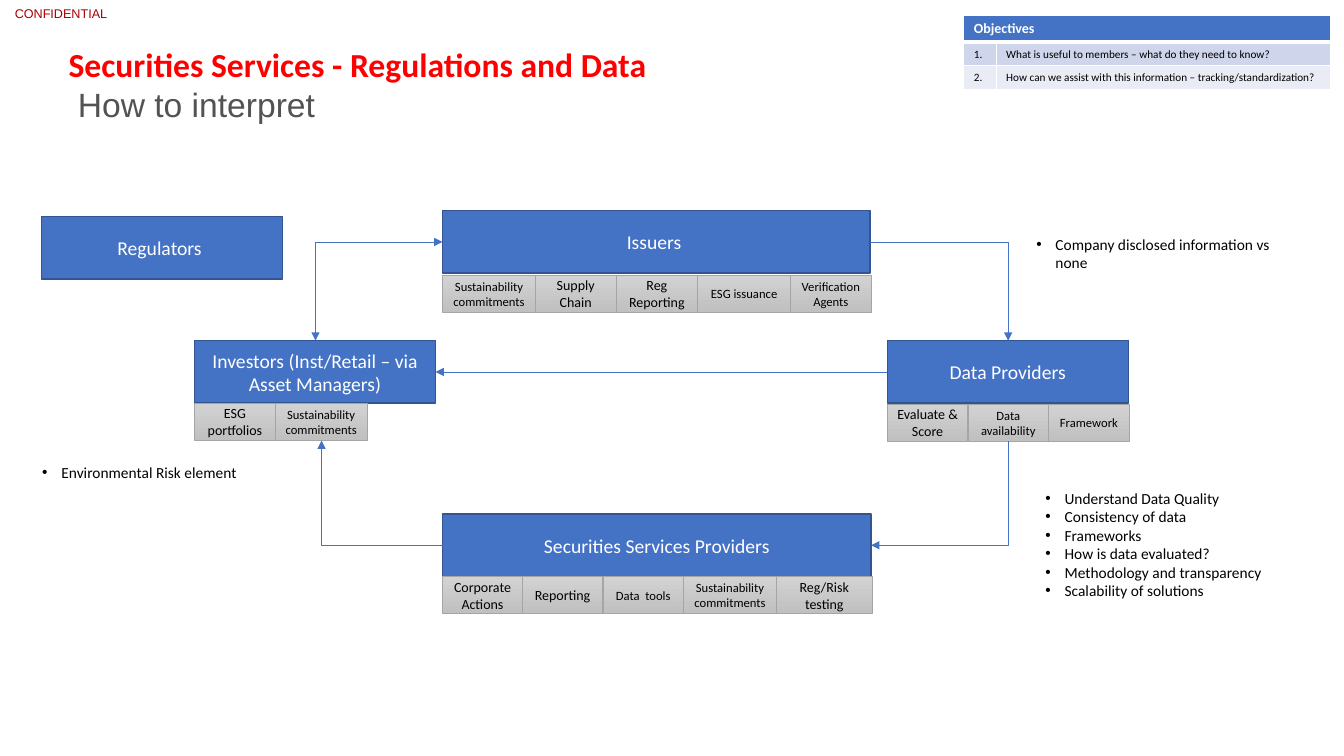
import pptx
import pptx.util
import pptx.dml.color
import pptx.enum.shapes
import pptx.enum.text
import pptx.oxml
import pptx.oxml.ns
from pptx.util import Inches, Pt

BLUE, NAVY, WHITE, BLACK = "4472C4", "325491", "FFFFFF", "000000"
MIDDLE = pptx.enum.text.MSO_ANCHOR.MIDDLE
CENTER = pptx.enum.text.PP_ALIGN.CENTER
LEFT = pptx.enum.text.PP_ALIGN.LEFT

# Content: text, left, top, width, height, size, bold, font, colour, align
headings = [
    ("CONFIDENTIAL", 0, 0, 1.21, 0.26, 9, False, "Arial", "A80000", CENTER),
    (" How to interpret", 0.68, 0.84, 10.94, 0.39, 24, False, "Arial", "525355", LEFT),
    ("Securities Services - Regulations and Data", 0.68, 0.45, 10.94, 0.39, 24, True,
     "Calibri", "FF0000", LEFT),
]
objectives = [
    ("Objectives", ""),
    ("1.", "What is useful to members – what do they need to know?"),
    ("2.", "How can we assist with this information – tracking/standardization?"),
]
row_fills = [BLUE, "CFD5EA", "E9EBF5"]
column_widths = [0.32, 3.32]
row_heights = [0.27, 0.23, 0.23]

# Bulleted notes: left, top, width, height, lines
notes = [
    (10.27, 4.8, 2.81, 1.21, ["Understand Data Quality", "Consistency of data", "Frameworks",
                              "How is data evaluated?", "Methodology and transparency",
                              "Scalability of solutions"]),
    (10.18, 2.28, 2.81, 0.47, ["Company disclosed information vs none"]),
    (0.32, 4.54, 2.81, 0.29, ["Environmental Risk element"]),
]

# Parties: name, left, top, width, top of topics, topics as (text, size, width)
parties = [
    ("Issuers ", 4.39, 2.09, 4.24, 2.73, [
        ("Sustainability commitments", 9, 0.92), ("Supply Chain", 10, 0.8),
        ("Reg Reporting", 10, 0.81), ("ESG issuance", 9, 0.92),
        ("Verification Agents", 9, 0.8)]),
    ("Data Providers", 8.8, 3.38, 2.39, 4.01, [
        ("Evaluate & Score", 10, 0.8), ("Data availability", 9, 0.8), ("Framework", 9, 0.8)]),
    ("Investors (Inst/Retail – via Asset Managers)", 1.93, 3.38, 2.39, 4.0, [
        ("ESG portfolios", 10, 0.8), ("Sustainability commitments", 9, 0.91)]),
    ("Securities Services Providers", 4.39, 5.1, 4.25, 5.72, [
        ("Corporate Actions", 10, 0.79), ("Reporting", 10, 0.8), ("Data  tools", 9, 0.8),
        ("Sustainability commitments", 9, 0.92), ("Reg/Risk testing", 10, 0.95)]),
    ("Regulators ", 0.41, 2.15, 2.39, 0, []),
]
PARTY_HEIGHT, TOPIC_HEIGHT = 0.62, 0.37

# Flows run sideways first, then up or down: start, end, arrowheads
flows = [
    ((8.63, 2.4), (10, 3.38), ["tailEnd"]),
    ((8.64, 5.41), (10, 4.38), ["headEnd"]),
    ((4.39, 5.41), (3.19, 4.37), ["tailEnd"]),
    ((8.8, 3.69), (4.32, 3.69), ["tailEnd"]),
    ((4.39, 2.4), (3.13, 3.38), ["headEnd", "tailEnd"]),
]


def rgb(hex_colour):
    return pptx.dml.color.RGBColor.from_string(hex_colour)


def add_xml(parent, tag, **attributes):
    child = pptx.oxml.ns.qn(tag)
    element = parent.makeelement(child, attributes)
    parent.append(element)
    return element


def style(paragraph, size, colour, bold=False, font="Calibri", align=LEFT):
    paragraph.alignment = align
    paragraph.font.size, paragraph.font.bold = Pt(size), bold
    paragraph.font.name, paragraph.font.color.rgb = font, rgb(colour)


def add_text(left, top, width, height):
    box = slide.shapes.add_textbox(Inches(left), Inches(top), Inches(width), Inches(height))
    box.text_frame.word_wrap = True
    return box.text_frame


def add_box(text, left, top, width, height, size, colour, outline, weight):
    box = slide.shapes.add_shape(pptx.enum.shapes.MSO_SHAPE.RECTANGLE, Inches(left),
                                 Inches(top), Inches(width), Inches(height))
    box.shadow.inherit = False
    box.line.color.rgb, box.line.width = rgb(outline), Pt(weight)
    box.text_frame.text = text
    box.text_frame.word_wrap = True
    box.text_frame.vertical_anchor = MIDDLE
    style(box.text_frame.paragraphs[0], size, colour, align=CENTER)
    return box


presentation = pptx.Presentation()
presentation.slide_width, presentation.slide_height = Inches(13.33), Inches(7.5)
slide = presentation.slides.add_slide(presentation.slide_layouts[6])

# Headings
for text, left, top, width, height, size, bold, font, colour, align in headings:
    frame = add_text(left, top, width, height)
    frame.margin_left = frame.margin_right = frame.margin_top = frame.margin_bottom = 0
    frame.text = text
    style(frame.paragraphs[0], size, colour, bold, font, align)
    if align == CENTER:
        frame.vertical_anchor = MIDDLE
    else:
        frame.paragraphs[0].line_spacing = Pt(28)

# Objectives table
table = slide.shapes.add_table(3, 2, Inches(9.56), Inches(0.15), Inches(3.64),
                               Inches(sum(row_heights))).table
for column, width in zip(table.columns, column_widths):
    column.width = Inches(width)
for r, texts in enumerate(objectives):
    table.rows[r].height = Inches(row_heights[r])
    for c, text in enumerate(texts):
        cell = table.cell(r, c)
        cell.text = text
        header = r == 0
        style(cell.text_frame.paragraphs[0], 10 if header else 8,
              WHITE if header else BLACK, header)
        for side in ("a:lnL", "a:lnR", "a:lnT", "a:lnB"):
            thick = (header and side == "a:lnB") or (r == 1 and side == "a:lnT")
            border = add_xml(cell._tc.get_or_add_tcPr(), side, w=str(Pt(3 if thick else 1)))
            add_xml(add_xml(border, "a:solidFill"), "a:srgbClr", val=WHITE)
        cell.fill.solid()
        cell.fill.fore_color.rgb = rgb(row_fills[r])
table.cell(0, 0).merge(table.cell(0, 1))

# Bulleted notes
for left, top, width, height, lines in notes:
    frame = add_text(left, top, width, height)
    frame.text = "\n".join(lines)
    for paragraph in frame.paragraphs:
        style(paragraph, 11, BLACK)
        properties = paragraph._p.get_or_add_pPr()
        properties.set("marL", str(Inches(0.19)))
        properties.set("indent", str(Inches(-0.19)))
        bullet_font = add_xml(properties, "a:buFont", typeface="Arial")
        bullet = add_xml(properties, "a:buChar", char="•")
        properties.insert(0, bullet_font)
        properties.insert(1, bullet)

# Parties with their topics
for name, left, top, width, topics_top, topics in parties:
    party = add_box(name, left, top, width, PARTY_HEIGHT, 14, WHITE, NAVY, 1)
    party.fill.solid()
    party.fill.fore_color.rgb = rgb(BLUE)
    for text, size, topic_width in topics:
        topic = add_box(text, left, topics_top, topic_width, TOPIC_HEIGHT, size, BLACK,
                        "A5A5A5", 0.5)
        topic.fill.gradient()
        topic.fill.gradient_angle = 270
        for stop, shade in zip(topic.fill.gradient_stops, ("D2D2D2", "C0C0C0")):
            stop.color.rgb = rgb(shade)
        left += topic_width

# Flows
for start, end, arrowheads in flows:
    straight = start[1] == end[1]
    kind = pptx.enum.shapes.MSO_CONNECTOR
    flow = slide.shapes.add_connector(kind.STRAIGHT if straight else kind.ELBOW,
                                      *map(Inches, start + end))
    flow.line.color.rgb, flow.line.width = rgb(BLUE), Pt(0.5)
    if not straight:
        flow._element.spPr.find(pptx.oxml.ns.qn("a:prstGeom")).set("prst", "bentConnector2")
    for arrowhead in arrowheads:
        add_xml(flow.line._get_or_add_ln(), "a:" + arrowhead, type="triangle")
    add_xml(flow._element.spPr, "a:effectLst")

presentation.save("out.pptx")
